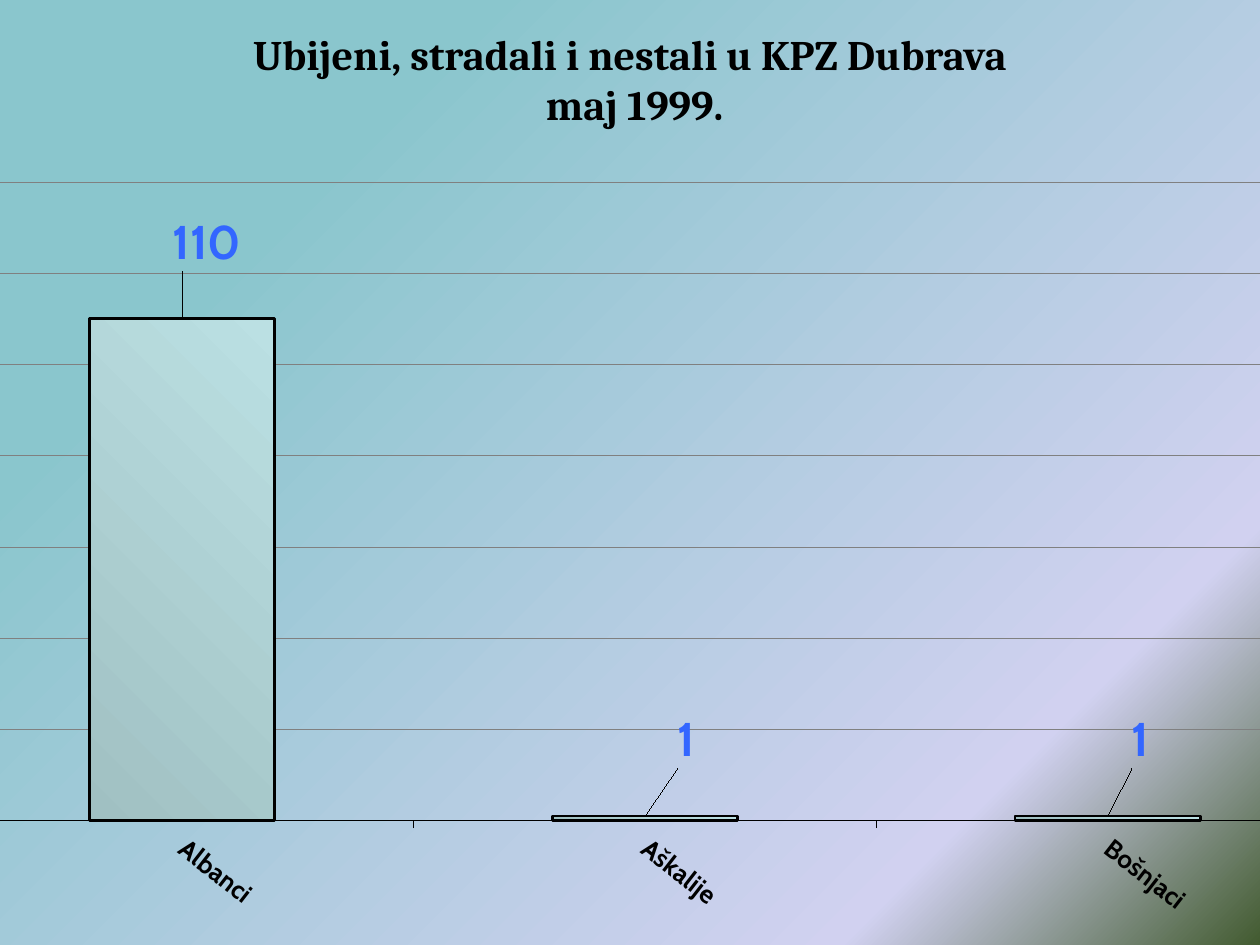
from dataclasses import dataclass

from lxml import etree
from pptx import Presentation
from pptx.chart.data import CategoryChartData
from pptx.dml.color import RGBColor
from pptx.enum import chart as ch, text
from pptx.oxml import parse_xml
from pptx.oxml.ns import nsdecls, qn
from pptx.util import Inches, Pt

BLACK = RGBColor(0x00, 0x00, 0x00)
GRAY = RGBColor(0x80, 0x80, 0x80)
BLUE = RGBColor(0x33, 0x66, 0xFF)
TEAL = RGBColor(0x8A, 0xC6, 0xCD)
LILAC = RGBColor(0xD1, 0xD1, 0xF0)
GREEN = RGBColor(0x42, 0x5B, 0x30)
BAR_DARK = RGBColor(0xA0, 0xC0, 0xC2)
BAR_LIGHT = RGBColor(0xBB, 0xE0, 0xE3)
HEAD_FONT, BODY_FONT = "Cambria", "Cabin"
W, H = Inches(10), Inches(7.5)
HAIRLINE = Pt(0.37)


@dataclass(frozen=True)
class Bar:
    name: str
    value: int
    dx: float
    dy: float


@dataclass(frozen=True)
class Stop:
    pos: int
    color: RGBColor
    alpha: int = 100


BARS = [
    Bar("Albanci", 110, 0.015, -0.05),
    Bar("Aškalije", 1, 0.025, -0.05),
    Bar("Bošnjaci", 1, 0.02, -0.05),
]
BACKDROP = [Stop(22, TEAL), Stop(81, LILAC, 91), Stop(100, GREEN)]
BAR_FILL = [Stop(0, BAR_DARK), Stop(100, BAR_LIGHT)]


def set_gradient(fill, stops: list[Stop], angle: int) -> None:
    fill.gradient()
    fill.gradient_angle = (360 - angle) % 360
    gs_list = fill._fill._gradFill.find(qn("a:gsLst"))
    for old in list(gs_list):
        gs_list.remove(old)
    for stop in stops:
        gs_list.append(parse_xml(
            f'<a:gs {nsdecls("a")} pos="{stop.pos * 1000}">'
            f'<a:srgbClr val="{stop.color}"><a:alpha val="{stop.alpha * 1000}"/>'
            f'</a:srgbClr></a:gs>'))


def set_font(font, size: float, color: RGBColor = BLACK,
             name: str = BODY_FONT, bold: bool = True) -> None:
    font.size, font.name, font.bold = Pt(size), name, bold
    font.color.rgb = color


def set_line(line, color: RGBColor, width: int) -> None:
    line.color.rgb, line.width = color, width


def add_text(s, lines: list[str], box: tuple, *, size: float, name: str) -> None:
    tf = s.shapes.add_textbox(*box).text_frame
    tf.word_wrap = True
    tf.vertical_anchor = text.MSO_ANCHOR.MIDDLE
    p = tf.paragraphs[0]
    p.alignment = text.PP_ALIGN.CENTER
    for i, line in enumerate(lines):
        if i:
            p.add_line_break()
        r = p.add_run()
        r.text = line
        set_font(r.font, size, name=name)


def manual_layout(inner: bool = False, **shares: float):
    layout = parse_xml(f'<c:layout {nsdecls("c")}><c:manualLayout/></c:layout>')
    values = {"layoutTarget": "inner", "xMode": "edge", "yMode": "edge"} if inner else {}
    for tag, value in {**values, **shares}.items():
        etree.SubElement(layout[0], qn(f"c:{tag}")).set("val", str(value))
    return layout


def style_axes(chart) -> None:
    cat, val = chart.category_axis, chart.value_axis
    for axis in (cat, val):
        set_line(axis.format.line, BLACK, HAIRLINE)
    cat.has_major_gridlines = False
    cat.major_tick_mark = ch.XL_TICK_MARK.OUTSIDE
    cat.tick_label_position = ch.XL_TICK_LABEL_POSITION.LOW
    set_font(cat.tick_labels.font, 15)
    cat._element.find(f'{qn("c:txPr")}/{qn("a:bodyPr")}').set("rot", str(38 * 60000))

    val.minimum_scale, val.maximum_scale, val.major_unit = 0, 150, 20
    val.tick_label_position = ch.XL_TICK_LABEL_POSITION.NONE
    val.has_major_gridlines = True
    set_line(val.major_gridlines.format.line, GRAY, HAIRLINE)


def style_bars(plot) -> None:
    plot.gap_width = 150
    plot.vary_by_categories = False
    series = plot.series[0]
    set_gradient(series.format.fill, BAR_FILL, 315)
    set_line(series.format.line, BLACK, Pt(1.5))
    for i, bar in enumerate(BARS):
        label = series.points[i].data_label
        set_font(label.font, 27, BLUE)
        label.position = ch.XL_LABEL_POSITION.OUTSIDE_END
    for bar, idx in zip(BARS, series._element.xpath("c:dLbls/c:dLbl/c:idx")):
        idx.addnext(manual_layout(x=bar.dx, y=bar.dy))


def add_bar_chart(s) -> None:
    data = CategoryChartData(number_format="#,##0")
    data.categories = [bar.name for bar in BARS]
    data.add_series("Series 1", [bar.value for bar in BARS])
    box = (int(-0.12 * W), Inches(0.92), Inches(13.07), Inches(6.74))
    chart = s.shapes.add_chart(ch.XL_CHART_TYPE.COLUMN_CLUSTERED, *box, data).chart
    chart.has_legend = chart.has_title = False
    set_font(chart.font, 27)
    style_axes(chart)
    style_bars(chart.plots[0])

    area = chart._chartSpace.chart.plotArea
    for old in area.findall(qn("c:layout")):
        area.remove(old)
    area.insert(0, manual_layout(inner=True, x=0.062, y=0.024, w=0.843, h=0.806))


def main() -> None:
    prs = Presentation()
    prs.slide_width, prs.slide_height = W, H
    s = prs.slides.add_slide(prs.slide_layouts[6])
    set_gradient(s.background.fill, BACKDROP, 45)
    add_bar_chart(s)
    add_text(s, ["Ubijeni, stradali i nestali u KPZ Dubrava", " maj 1999."],
             (0, 0, W, H // 6), size=24, name=HEAD_FONT)
    prs.save("out.pptx")


if __name__ == "__main__":
    main()
